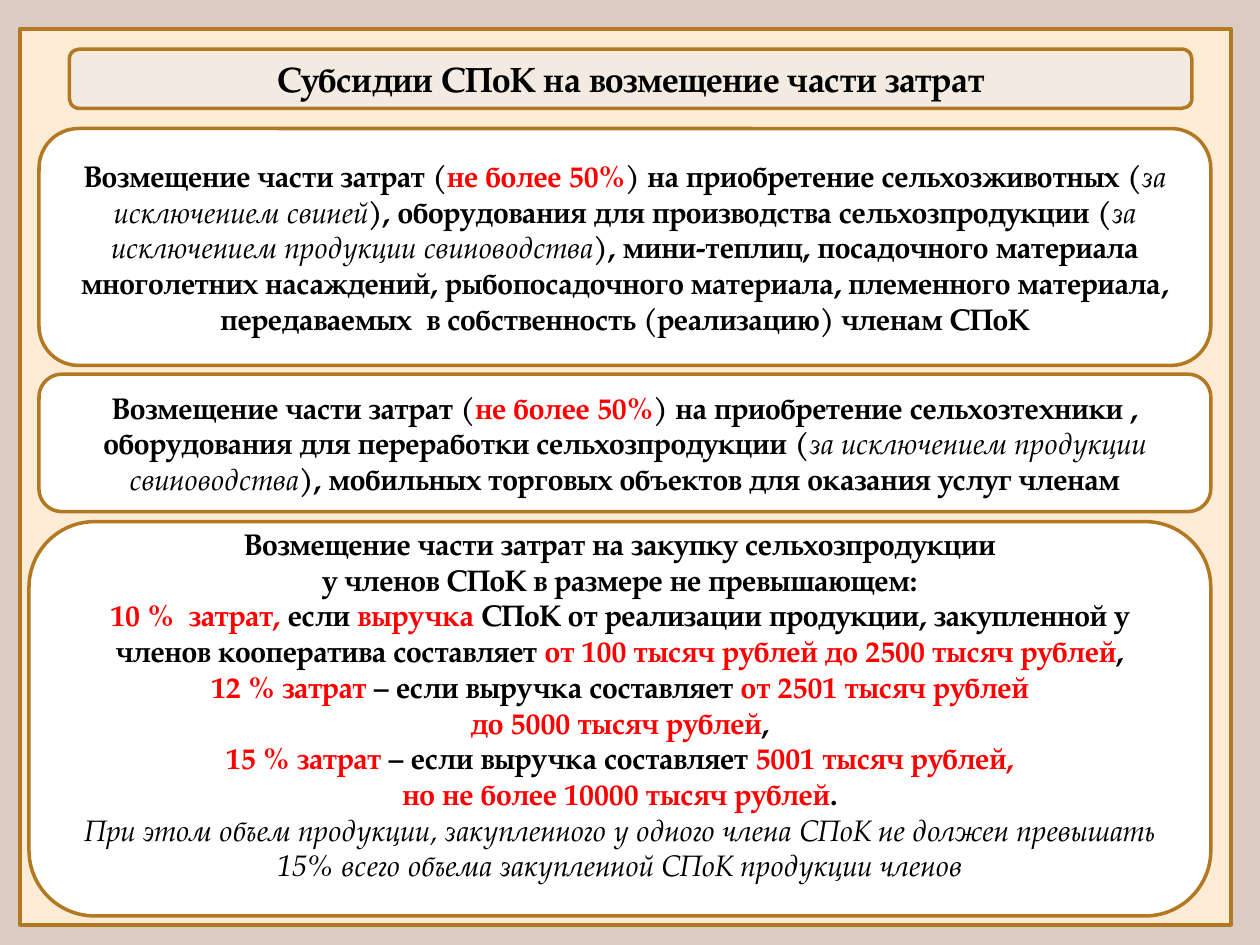
from dataclasses import dataclass

from pptx import Presentation
from pptx.dml.color import RGBColor
from pptx.enum.shapes import MSO_SHAPE
from pptx.enum.text import MSO_ANCHOR, PP_ALIGN
from pptx.util import Inches, Pt

RECT, ROUNDED = MSO_SHAPE.RECTANGLE, MSO_SHAPE.ROUNDED_RECTANGLE
MIDDLE, CENTER = MSO_ANCHOR.MIDDLE, PP_ALIGN.CENTER
COLS, ROWS = 100, 75


@dataclass(frozen=True)
class Theme:
    """Colours, font and type sizes of the slide."""
    font: str = "TeX Gyre Pagella"
    title_size: int = 20
    body_size: int = 17
    line_width: int = 2
    background: str = "DACBC3"
    frame: str = "FCECD5"
    header: str = "F3EAE2"
    panel: str = "FFFFFF"
    line: str = "B27822"
    text: str = "000000"
    accent: str = "FF0000"


THEME = Theme()
BOLD = (True, False, THEME.text)
RED = (True, False, THEME.accent)
ITALIC = (False, True, THEME.text)
BOLD_ITALIC = (True, True, THEME.text)

FRAME_BOX = (1.6, 2.3, 96.1, 71.1)
HEADER_BOX = (5.5, 3.9, 89.1, 4.7)
TITLE = [[("Субсидии СПоК на возмещение части затрат", BOLD)]]

LIMIT = [("Возмещение части затрат (", BOLD), ("не более 50%", RED)]
NO_PIG_PRODUCTS = [
    ("(", BOLD_ITALIC),
    ("за исключением продукции свиноводства", ITALIC),
    (")", BOLD_ITALIC),
]

LIVESTOCK = [[
    *LIMIT,
    (") на приобретение сельхозживотных ", BOLD),
    ("(", BOLD_ITALIC),
    ("за исключением свиней", ITALIC),
    (")", BOLD_ITALIC),
    (", оборудования для производства сельхозпродукции ", BOLD),
    *NO_PIG_PRODUCTS,
    (", мини-теплиц, посадочного материала многолетних насаждений, "
     "рыбопосадочного материала, племенного материала, "
     "передаваемых  в собственность (реализацию) членам СПоК", BOLD),
]]

MACHINERY = [[
    *LIMIT,
    (") на приобретение сельхозтехники , оборудования для переработки "
     "сельхозпродукции ", BOLD),
    *NO_PIG_PRODUCTS,
    (", мобильных торговых объектов для оказания услуг членам", BOLD),
]]

PURCHASES = [
    [("Возмещение части затрат на закупку сельхозпродукции", BOLD)],
    [("у членов СПоК в размере не превышающем:", BOLD)],
    [("10 %  затрат, ", RED), ("если ", BOLD), ("выручка ", RED),
     ("СПоК от реализации продукции, закупленной у членов кооператива "
      "составляет ", BOLD),
     ("от 100 тысяч рублей до 2500 тысяч рублей", RED), (",", BOLD)],
    [("12 % затрат ", RED), ("– если выручка составляет ", BOLD),
     ("от 2501 тысяч рублей", RED)],
    [("до 5000 тысяч рублей", RED), (",", BOLD)],
    [("15 % затрат ", RED), ("– если выручка составляет ", BOLD),
     ("5001 тысяч рублей,", RED)],
    [("но не более 10000 тысяч рублей", RED), (".", BOLD)],
    [("При этом объем продукции, закупленного у одного члена СПоК не должен "
      "превышать 15% всего объема закупленной СПоК продукции членов", ITALIC)],
]

PANELS = [
    ((3.1, 10.2, 93, 18.8), LIVESTOCK, 0.05),
    ((3.1, 29.7, 93, 10.9), MACHINERY, 0.05),
    ((2.3, 41.4, 93.8, 31.3), PURCHASES, 0.28),
]


def rgb(value):
    """Turn a hex string into a colour."""
    return RGBColor.from_string(value)


def add_box(prs, s, kind, box, fill):
    """Place an outlined shape on the grid."""
    col, row = prs.slide_width / COLS, prs.slide_height / ROWS
    left, top, width, height = box
    sp = s.shapes.add_shape(kind, round(left * col), round(top * row),
                            round(width * col), round(height * row))
    sp.shadow.inherit = False
    sp.fill.solid()
    sp.fill.fore_color.rgb = rgb(fill)
    sp.line.color.rgb = rgb(THEME.line)
    sp.line.width = Pt(THEME.line_width)
    return sp


def write(sp, paragraphs, size, bottom=0.05):
    """Fill a shape with centred paragraphs of styled runs."""
    tf = sp.text_frame
    tf.word_wrap = True
    tf.vertical_anchor = MIDDLE
    tf.margin_bottom = Inches(bottom)
    for i, runs in enumerate(paragraphs):
        p = tf.add_paragraph() if i else tf.paragraphs[0]
        p.alignment = CENTER
        p.font.name = THEME.font
        p.font.size = Pt(size)
        for text, (bold, italic, color) in runs:
            r = p.add_run()
            r.text = text
            r.font.name = THEME.font
            r.font.size = Pt(size)
            r.font.bold, r.font.italic = bold, italic
            r.font.color.rgb = rgb(color)


def add_frame(prs, s, box):
    """Paint the background and the framed page."""
    fill = s.background.fill
    fill.solid()
    fill.fore_color.rgb = rgb(THEME.background)
    add_box(prs, s, RECT, box, THEME.frame)


def add_header(prs, s, box):
    """Place the slide title."""
    sp = add_box(prs, s, ROUNDED, box, THEME.header)
    write(sp, TITLE, THEME.title_size)


def add_panel(prs, s, box, paragraphs, bottom):
    """Place one subsidy panel."""
    sp = add_box(prs, s, ROUNDED, box, THEME.panel)
    write(sp, paragraphs, THEME.body_size, bottom)


def main():
    """Build and save the slide."""
    prs = Presentation()
    prs.slide_width, prs.slide_height = Inches(10), Inches(7.5)
    s = prs.slides.add_slide(prs.slide_layouts[6])
    add_frame(prs, s, FRAME_BOX)
    add_header(prs, s, HEADER_BOX)
    for box, paragraphs, bottom in PANELS:
        add_panel(prs, s, box, paragraphs, bottom)
    prs.save("out.pptx")


if __name__ == "__main__":
    main()
